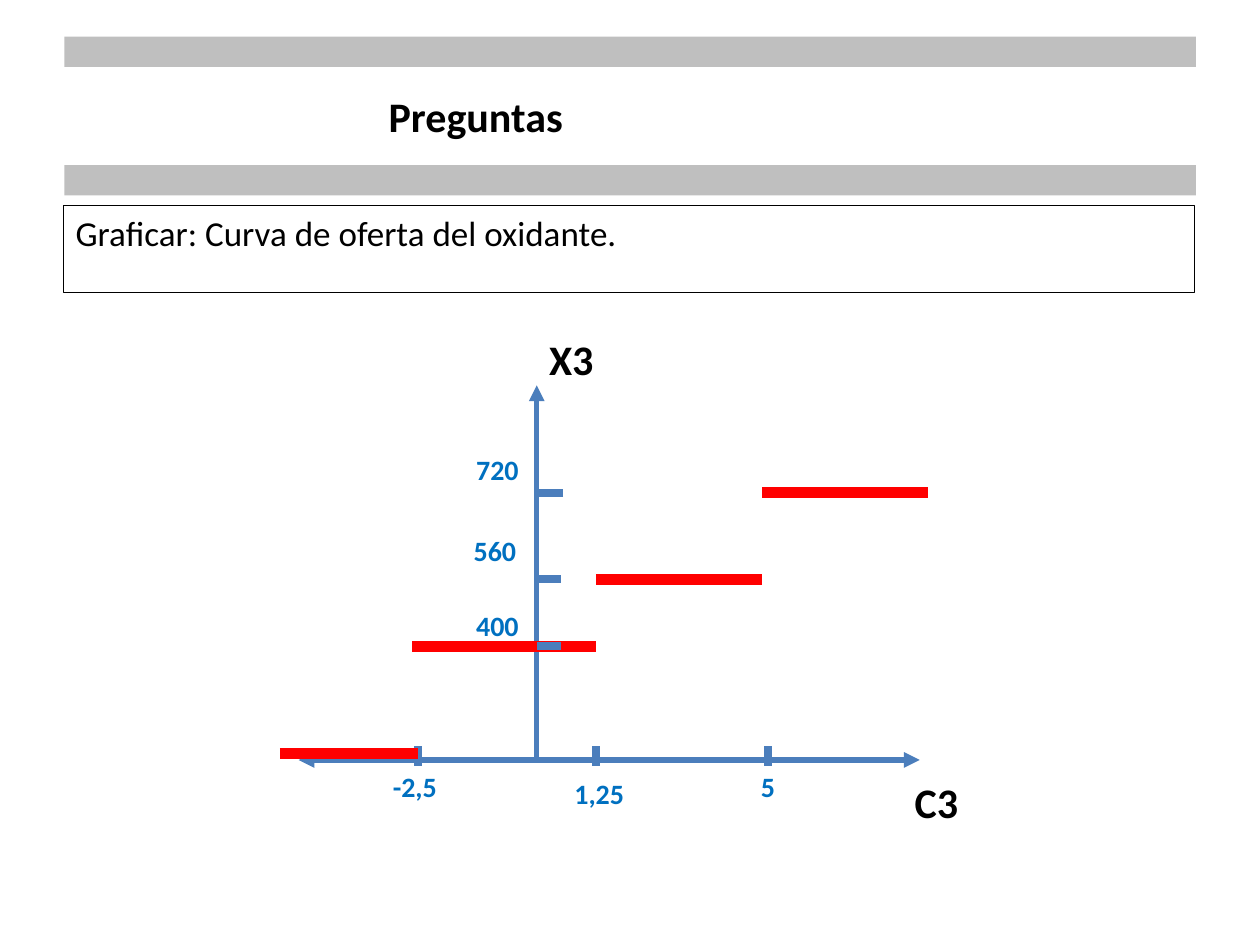
from lxml.etree import SubElement
from pptx import Presentation
from pptx.dml.color import RGBColor
from pptx.enum.shapes import MSO_CONNECTOR, MSO_SHAPE
from pptx.enum.text import MSO_ANCHOR, MSO_AUTO_SIZE, PP_ALIGN
from pptx.oxml.ns import qn
from pptx.util import Cm, Pt

COLORS = {"bar": "BFBFBF", "text": "000000", "axis": "4B7EBC",
          "label": "0070C0", "step": "FF0000"}
TITLE = {"name": "Calibri", "size": Pt(24), "bold": True}
BODY = {"name": "Calibri", "size": Pt(20), "bold": False}
LABEL = {"name": "Calibri", "size": Pt(16), "bold": True}


def rgb(key):
    return RGBColor.from_string(COLORS[key])


def place(sp, left, top, width, height):
    sp.left, sp.top, sp.width, sp.height = map(Cm, (left, top, width, height))


def write(p, text, fmt, color="text"):
    r = p.add_run()
    r.text = text
    for name, value in fmt.items():
        setattr(r.font, name, value)
    r.font.color.rgb = rgb(color)


def add_label(s, text, left, top, width, height, fmt=LABEL, color="label"):
    tb = s.shapes.add_textbox(Cm(left), Cm(top), Cm(width), Cm(height))
    tb.text_frame.word_wrap = False
    write(tb.text_frame.paragraphs[0], text, fmt, color)


def add_line(s, x1, y1, x2, y2, color, weight, arrows=()):
    line = s.shapes.add_connector(MSO_CONNECTOR.STRAIGHT, *map(Cm, (x1, y1, x2, y2)))
    line.line.color.rgb = rgb(color)
    line.line.width = Pt(weight)
    for end in arrows:
        SubElement(line.line._get_or_add_ln(), qn(f"a:{end}"), type="triangle")
    SubElement(line._element.spPr, qn("a:effectLst"))


def header(s, left, top, width):
    # Grey bars above and below the title
    for dy in (0, 2.59):
        bar = s.shapes.add_shape(MSO_SHAPE.RECTANGLE, Cm(left), Cm(top + dy),
                                 Cm(width), Cm(0.61))
        bar.shadow.inherit = False
        bar.fill.solid()
        bar.fill.fore_color.rgb = rgb("bar")
        bar.line.fill.background()
    title = s.shapes.title
    place(title, left - 0.03, top + 0.02, 16.64, 3.15)
    tf = title.text_frame
    tf.vertical_anchor = MSO_ANCHOR.MIDDLE
    p = tf.paragraphs[0]
    p.alignment = PP_ALIGN.CENTER
    write(p, "Preguntas", TITLE)


def question(s, left, top, width, height):
    body = s.placeholders[1]
    place(body, left, top, width, height)
    body.line.color.rgb = rgb("text")
    body.line.width = Pt(0.5)
    tf = body.text_frame
    tf.auto_size = MSO_AUTO_SIZE.NONE
    p = tf.paragraphs[0]
    pPr = p._p.get_or_add_pPr()
    pPr.set("marL", "0")
    pPr.set("indent", "0")
    SubElement(pPr, qn("a:buNone"))
    p.space_before = Pt(0)
    write(p, "Graficar: Curva de oferta del oxidante.", BODY)


def supply_curve(s, left, top):
    axis_x, axis_y = left + 5.18, top + 8.72

    # Axes
    add_line(s, axis_x, axis_y, axis_x, top + 1.17, "axis", 3, ["tailEnd"])
    add_line(s, left + 0.38, axis_y, left + 12.9, axis_y, "axis", 3,
             ["headEnd", "tailEnd"])

    # Horizontal axis: tick, label text, label offset and width
    for x, text, dx, dy, width in ((2.79, "-2,5", -0.76, 0.07, 1.5),
                                   (6.37, "1,25", -0.68, 0.2, 1.63),
                                   (9.85, "5", -0.4, 0.07, 0.86)):
        add_line(s, left + x, axis_y - 0.28, left + x, axis_y + 0.12, "axis", 4.5)
        add_label(s, text, left + x + dx, axis_y + dy, width, 1.02)

    # Steps of the supply curve: start, end, level
    for x1, x2, y in ((0, 2.79, 8.59), (2.67, 6.37, 6.43),
                      (6.37, 9.73, 5.08), (9.73, 13.06, 3.33)):
        add_line(s, left + x1, top + y, left + x2, top + y, "step", 6)

    # Vertical axis: level, label text, tick shift, label position
    for y, text, shift, x, label_y in ((6.43, "400", 0, 3.71, 5.54),
                                       (5.08, "560", 0, 3.66, 4.04),
                                       (3.33, "720", 0.05, 3.71, 2.39)):
        add_line(s, axis_x + shift + 0.48, top + y, axis_x + shift, top + y,
                 "axis", 4.5)
        add_label(s, text, left + x, top + label_y, 1.47, 1.02)

    # Axis names
    add_label(s, "C3", left + 12.55, top + 8.92, 1.4, 1.27, TITLE, "text")
    add_label(s, "X3", axis_x, top, 1.42, 1.27, TITLE, "text")


def main():
    prs = Presentation()
    prs.slide_width, prs.slide_height = Cm(25.4), Cm(19.05)
    s = prs.slides.add_slide(prs.slide_layouts[1])
    header(s, 1.3, 0.74, 22.81)
    question(s, 1.27, 4.14, 22.81, 1.75)
    supply_curve(s, 5.64, 6.6)
    prs.save("out.pptx")


if __name__ == "__main__":
    main()
